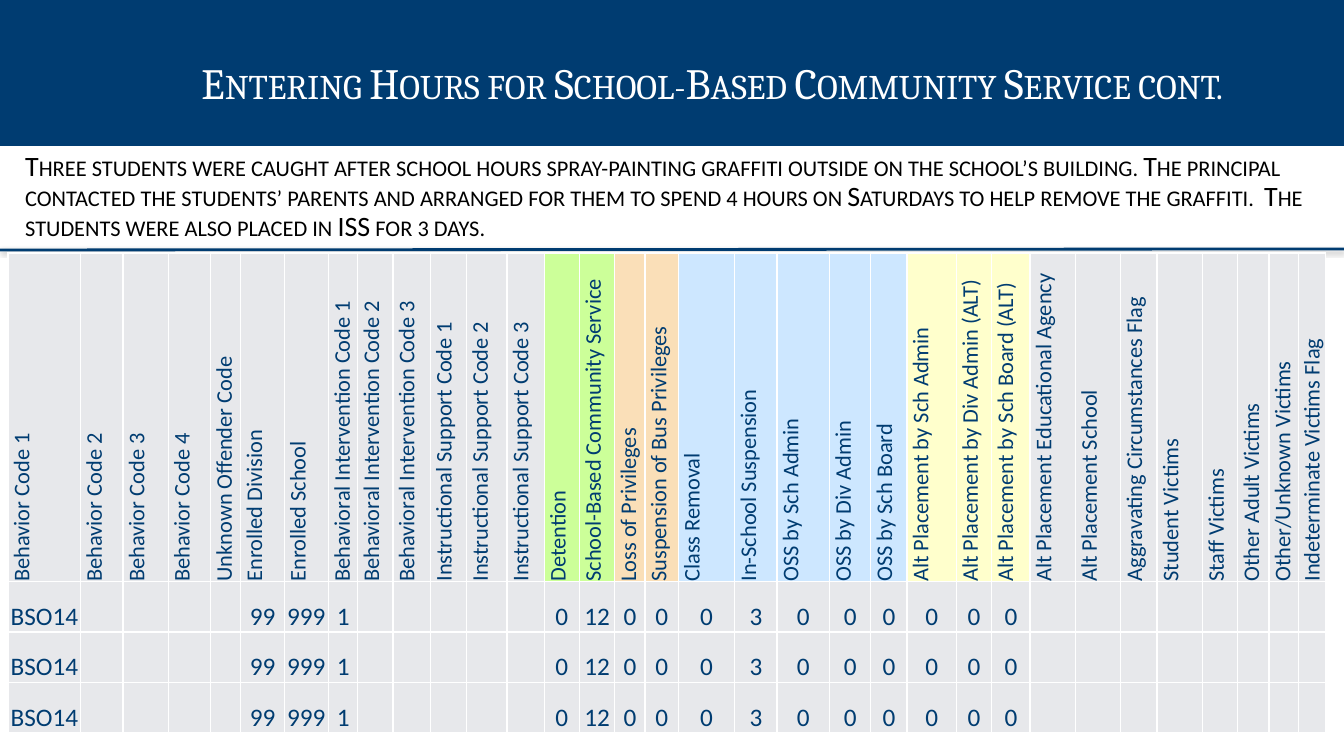
"""Build the slide on entering hours for school-based community service."""
from dataclasses import dataclass

from lxml.etree import SubElement
from pptx import Presentation
from pptx.dml.color import RGBColor
from pptx.enum.shapes import MSO_CONNECTOR
from pptx.enum.text import MSO_ANCHOR, MSO_AUTO_SIZE, PP_ALIGN
from pptx.oxml.ns import qn
from pptx.util import Inches, Pt


@dataclass(frozen=True)
class Theme:
    navy: str = "003C71"
    white: str = "FFFFFF"
    black: str = "000000"
    gray: str = "E7E8EB"
    green: str = "CCFF99"
    peach: str = "FADFB8"
    blue: str = "CDE7FF"
    cream: str = "FFFFCC"
    serif: str = "Cambria"
    sans: str = "Calibri"
    title: float = 30.8
    body: float = 20
    head: float = 16
    cell: float = 18


THEME = Theme()
WIDE, HIGH = Inches(13.33), Inches(7.5)
TITLE = "Entering Hours for School-Based Community Service cont."
STORY = (
    "Three students were caught after school hours spray-painting graffiti outside on the "
    "school’s building. The principal contacted the students’ parents and arranged for them "
    "to spend 4 hours on Saturdays to help remove the graffiti.  The students were also "
    "placed in ISS for 3 days."
)
STUDENTS = 3
HEAD_ROW, DATA_ROW = 3.26, 0.5
GROUPS = [
    (THEME.gray, [
        ("Behavior Code 1", 0.72, "BSO14"),
        ("Behavior Code 2", 0.42, ""),
        ("Behavior Code 3", 0.45, ""),
        ("Behavior Code 4", 0.42, ""),
        ("Unknown Offender Code", 0.3, ""),
        ("Enrolled Division", 0.43, "99"),
        ("Enrolled School", 0.44, "999"),
        ("Behavioral Intervention Code 1", 0.29, "1"),
        ("Behavioral Intervention Code 2", 0.35, ""),
        ("Behavioral Intervention Code 3", 0.37, ""),
        ("Instructional Support Code 1", 0.36, ""),
        ("Instructional Support Code 2", 0.4, ""),
        ("Instructional Support Code 3", 0.37, ""),
    ]),
    (THEME.green, [
        ("Detention", 0.35, "0"),
        ("School-Based Community Service", 0.35, "12"),
    ]),
    (THEME.peach, [
        ("Loss of Privileges", 0.3, "0"),
        ("Suspension of Bus Privileges", 0.33, "0"),
    ]),
    (THEME.blue, [
        ("Class Removal", 0.56, "0"),
        ("In-School Suspension", 0.42, "3"),
        ("OSS by Sch Admin", 0.52, "0"),
        ("OSS by Div Admin", 0.41, "0"),
        ("OSS by Sch Board", 0.36, "0"),
    ]),
    (THEME.cream, [
        ("Alt Placement by Sch Admin", 0.49, "0"),
        ("Alt Placement by Div Admin (ALT)", 0.35, "0"),
        ("Alt Placement by Sch Board (ALT)", 0.38, "0"),
    ]),
    (THEME.gray, [
        ("Alt Placement Educational Agency", 0.45, ""),
        ("Alt Placement School", 0.45, ""),
        ("Aggravating Circumstances Flag", 0.36, ""),
        ("Student Victims", 0.45, ""),
        ("Staff Victims", 0.35, ""),
        ("Other Adult Victims", 0.31, ""),
        ("Other/Unknown Victims", 0.29, ""),
        ("Indeterminate Victims Flag", 0.27, ""),
    ]),
]


def paint(fill, color):
    fill.solid()
    fill.fore_color.rgb = RGBColor.from_string(color)


def write(frame, text, size, color, font=THEME.sans, align=PP_ALIGN.LEFT,
          lead=1.0, before=0, small=False):
    para = frame.paragraphs[0]
    para.alignment, para.line_spacing = align, lead
    para.space_before = Pt(before)
    run = para.add_run()
    run.text = text
    run.font.size, run.font.name, run.font.bold = Pt(size), font, False
    run.font.color.rgb = RGBColor.from_string(color)
    if small:
        run._r.get_or_add_rPr().set("cap", "small")
    return para


def place(shape, left, top, width, height, pads):
    shape.left, shape.width = int(WIDE * left), int(WIDE * width)
    shape.top, shape.height = int(HIGH * top), int(HIGH * height)
    frame = shape.text_frame
    frame.word_wrap, frame.auto_size = True, MSO_AUTO_SIZE.NONE
    frame.vertical_anchor = MSO_ANCHOR.TOP
    (frame.margin_left, frame.margin_top,
     frame.margin_right, frame.margin_bottom) = map(Inches, pads)
    return frame


def banner(shape):
    frame = place(shape, 0, 0, 1, 0.193, (0.9, 0.7, 0.1, 0.05))
    paint(shape.fill, THEME.navy)
    write(frame, TITLE, THEME.title, THEME.white, font=THEME.serif,
          align=PP_ALIGN.CENTER, lead=0.7, before=10, small=True)


def story(shape):
    frame = place(shape, 0.009, 0.192, 0.983, 0.75, (0.13, 0.07, 0.13, 0.07))
    para = write(frame, STORY, THEME.body, THEME.black, lead=0.9, small=True)
    props = para._p.get_or_add_pPr()
    props.set("marL", "0")
    props.set("indent", "0")
    SubElement(props, qn("a:buNone"))


def divide(slide):
    rule = slide.shapes.add_connector(
        MSO_CONNECTOR.STRAIGHT, 0, Inches(2.48), WIDE, Inches(2.47))
    rule.line.width = Pt(2)
    paint(rule.line.fill, THEME.navy)
    effects = SubElement(rule._element.spPr, qn("a:effectLst"))
    shade = SubElement(effects, qn("a:outerShdw"), blurRad=str(Pt(3.1)),
                       dist=str(Pt(1.6)), dir="5400000", rotWithShape="0")
    tint = SubElement(shade, qn("a:srgbClr"), val=THEME.black)
    SubElement(tint, qn("a:alpha"), val="38000")


def style(cell, color):
    cell.margin_left = cell.margin_right = cell.margin_top = cell.margin_bottom = 0
    cell.vertical_anchor = MSO_ANCHOR.BOTTOM
    props = cell._tc.get_or_add_tcPr()
    for side in "LRTB":
        edge = SubElement(props, qn(f"a:ln{side}"), w=str(Pt(1)))
        SubElement(SubElement(edge, qn("a:solidFill")), qn("a:srgbClr"), val=THEME.white)
    paint(cell.fill, color)


def grid(slide):
    cols = [(color, *item) for color, items in GROUPS for item in items]
    width = Inches(sum(item[2] for item in cols))
    height = Inches(HEAD_ROW + DATA_ROW * STUDENTS)
    table = slide.shapes.add_table(STUDENTS + 1, len(cols), Inches(0.08),
                                   Inches(2.51), width, height).table
    table.first_row = table.horz_banding = False
    for num, row in enumerate(table.rows):
        row.height = Inches(DATA_ROW if num else HEAD_ROW)
    for col, (color, name, span, value) in enumerate(cols):
        table.columns[col].width = Inches(span)
        head = table.cell(0, col)
        style(head, color)
        head._tc.get_or_add_tcPr().set("vert", "vert270")
        write(head.text_frame, name, THEME.head, THEME.navy, align=PP_ALIGN.JUSTIFY)
        for row in range(1, STUDENTS + 1):
            cell = table.cell(row, col)
            style(cell, THEME.gray)
            if value:
                write(cell.text_frame, value, THEME.cell, THEME.navy, align=PP_ALIGN.CENTER)


def main():
    deck = Presentation()
    deck.slide_width, deck.slide_height = WIDE, HIGH
    slide = deck.slides.add_slide(deck.slide_layouts[1])
    banner(slide.shapes.title)
    story(slide.placeholders[1])
    divide(slide)
    grid(slide)
    deck.save("out.pptx")


if __name__ == "__main__":
    main()
